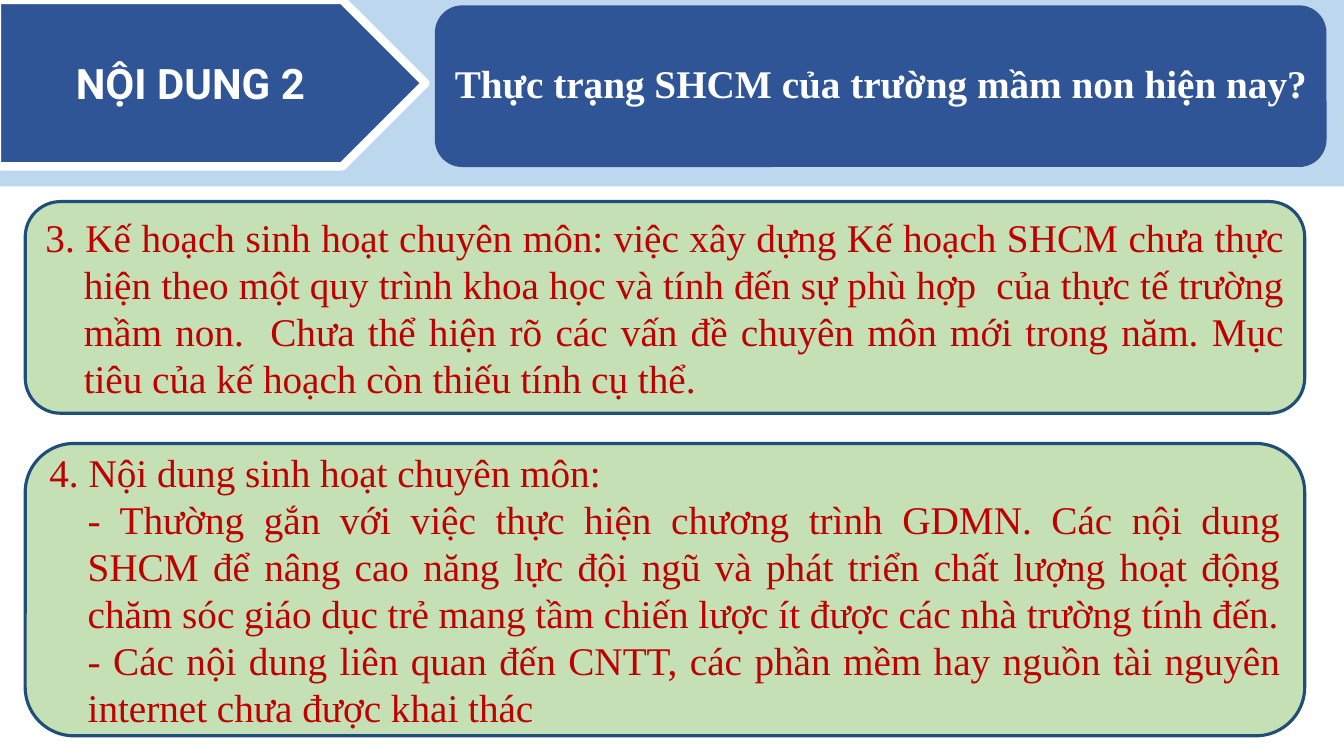
import pptx
import pptx.util
import pptx.dml.color
import pptx.enum.shapes
import pptx.enum.text

Inches = pptx.util.Inches
Shapes = pptx.enum.shapes.MSO_SHAPE
Align = pptx.enum.text.PP_ALIGN
SERIF = "Times New Roman"
BLUE, WHITE = "2F5597", "FFFFFF"
CARD_INDENT = 0.38

PLAN_TEXT = [
    "3. Kế hoạch sinh hoạt chuyên môn: việc xây dựng Kế hoạch SHCM chưa thực hiện theo một quy trình "
    "khoa học và tính đến sự phù hợp  của thực tế trường mầm non.  Chưa thể hiện rõ các vấn đề chuyên "
    "môn mới trong năm. Mục tiêu của kế hoạch còn thiếu tính cụ thể.",
]
CONTENT_TEXT = [
    "4. Nội dung sinh hoạt chuyên môn:",
    "- Thường gắn với việc thực hiện chương trình GDMN. Các nội dung SHCM để nâng cao năng lực đội ngũ "
    "và phát triển chất lượng hoạt động chăm sóc giáo dục trẻ mang tầm chiến lược ít được các nhà trường "
    "tính đến.",
    "- Các nội dung liên quan đến CNTT, các phần mềm hay nguồn tài nguyên internet chưa được khai thác",
]


def color(hex_text):
    """Return the RGB colour for a hex string."""
    return pptx.dml.color.RGBColor.from_string(hex_text)


def add_box(slide, kind, left, top, width, height, fill, line=None, line_width=1):
    """Add a filled preset shape, outlined when a line colour is given."""
    shape = slide.shapes.add_shape(kind, Inches(left), Inches(top), Inches(width), Inches(height))
    shape.shadow.inherit = False
    shape.fill.solid()
    shape.fill.fore_color.rgb = color(fill)
    if line:
        shape.line.color.rgb = color(line)
        shape.line.width = pptx.util.Pt(line_width)
    else:
        shape.line.fill.background()
    return shape


def write_text(shape, lines, size, font, text_color, bold=False, align=Align.CENTER):
    """Fill a shape with vertically centred paragraphs in one style."""
    frame = shape.text_frame
    frame.text = "\n".join(lines)
    frame.word_wrap = True
    frame.auto_size = pptx.enum.text.MSO_AUTO_SIZE.NONE
    frame.vertical_anchor = pptx.enum.text.MSO_ANCHOR.MIDDLE
    for paragraph in frame.paragraphs:
        paragraph.alignment = align
        for run in paragraph.runs:
            run.font.size = pptx.util.Pt(size)
            run.font.name = font
            run.font.bold = bold
            run.font.color.rgb = color(text_color)


def add_header(slide, left, top, width, height):
    """Draw the band with its section arrow and the title panel."""
    add_box(slide, Shapes.RECTANGLE, left, top, width, height, "BDD7EE")
    arrow = add_box(slide, Shapes.PENTAGON, left - 0.03, top, 4.25, height - 0.2, BLUE, WHITE, 6)
    write_text(arrow, ["NỘI DUNG 2"], 30, "Roboto", WHITE, bold=True)
    panel_left, panel_width = left + 4.32, width - 4.5
    add_box(slide, Shapes.ROUNDED_RECTANGLE, panel_left, top + 0.06, panel_width, height - 0.26, BLUE, "325491")
    title = slide.shapes.title
    title.left, title.top = Inches(panel_left), Inches(top + 0.37)
    title.width, title.height = Inches(panel_width), Inches(0.9)
    write_text(title, ["Thực trạng SHCM của trường mầm non hiện nay?"], 28, SERIF, WHITE, bold=True)
    title.text_frame.paragraphs[0].line_spacing = 1.0
    title.element.getparent().append(title.element)


def add_card(slide, left, top, width, height, lines):
    """Draw a green card whose first paragraph hangs and whose others are indented."""
    card = add_box(slide, Shapes.FLOWCHART_ALTERNATE_PROCESS, left, top, width, height, "C5E0B4", "1F4E79", 2.25)
    write_text(card, lines, 28, SERIF, "C00000", align=Align.JUSTIFY)
    for index, paragraph in enumerate(card.text_frame.paragraphs):
        properties = paragraph._p.get_or_add_pPr()
        properties.set("marL", str(Inches(CARD_INDENT)))
        properties.set("indent", str(0 if index else -Inches(CARD_INDENT)))


def main():
    """Build and save the slide."""
    presentation = pptx.Presentation()
    presentation.slide_width, presentation.slide_height = Inches(13.33), Inches(7.5)
    slide = presentation.slides.add_slide(presentation.slide_layouts[5])
    add_header(slide, 0, 0, 13.33, 1.85)
    add_card(slide, 0.25, 2, 12.69, 2.1, PLAN_TEXT)
    add_card(slide, 0.25, 4.4, 12.69, 2.9, CONTENT_TEXT)
    presentation.save("out.pptx")


if __name__ == "__main__":
    main()
